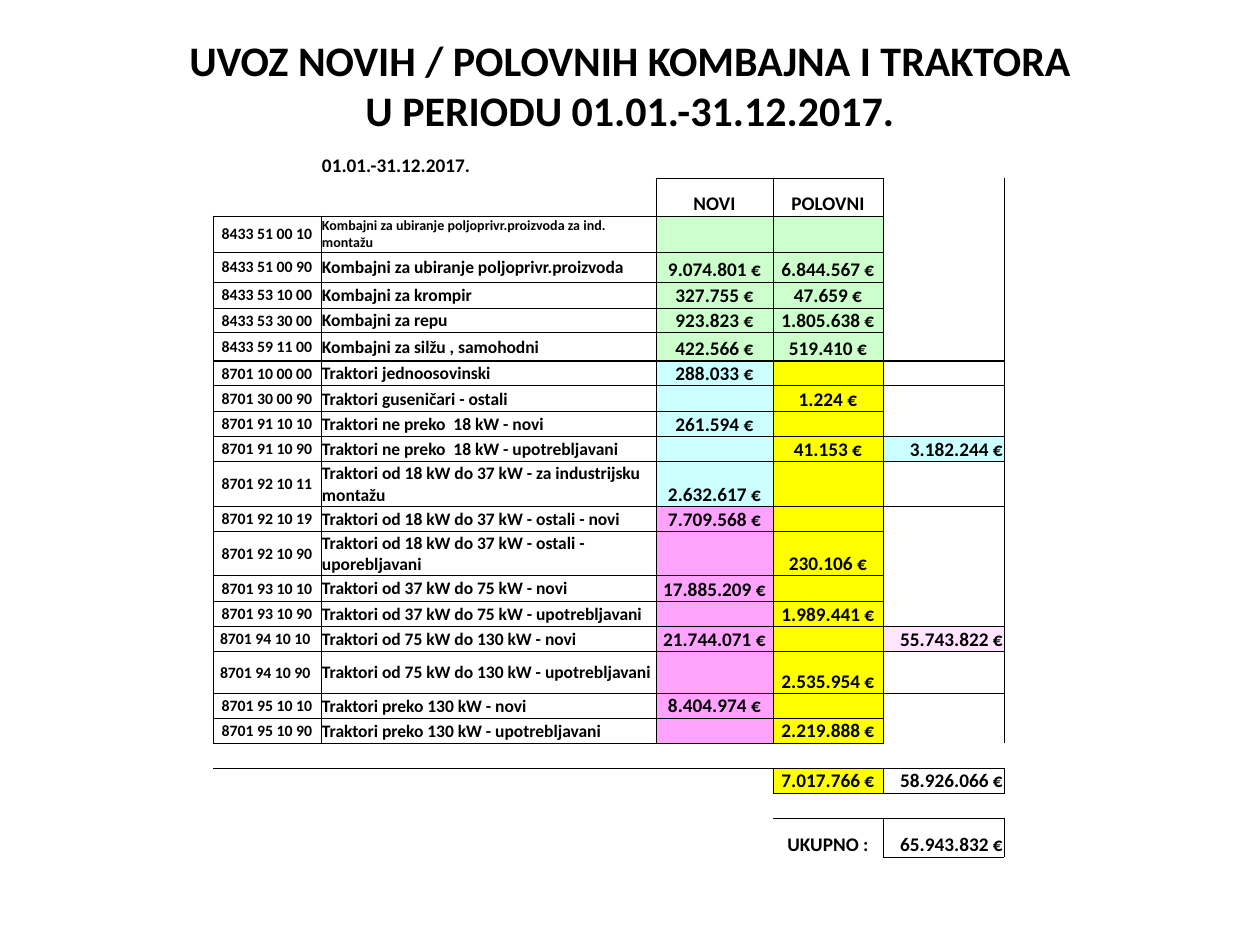
"""Build a slide with a table of combine and tractor imports, new and used."""
from lxml import etree
from pptx import Presentation
from pptx import util as u
from pptx.dml.color import RGBColor
from pptx.enum import text
from pptx.oxml.ns import qn

BLACK = RGBColor(0, 0, 0)
WHITE = RGBColor(255, 255, 255)
GREEN = RGBColor(0xCC, 0xFF, 0xCC)
CYAN = RGBColor(0xCC, 0xFF, 0xFF)
PINK = RGBColor(0xFF, 0xA3, 0xFF)
PALE = RGBColor(0xFF, 0xE5, 0xFF)
YELLOW = RGBColor(0xFF, 0xFF, 0)

TITLE = "UVOZ NOVIH / POLOVNIH KOMBAJNA I TRAKTORA\vU PERIODU 01.01.-31.12.2017."
FONT = "Calibri"
NO_STYLE = "{2D5ABB26-0587-4C30-8999-92F81FD0307C}"

GROUPS = [
    (GREEN, GREEN, [
        ("8433 51 00 10", "Kombajni za ubiranje poljoprivr.proizvoda za ind. montažu", "", ""),
        ("8433 51 00 90", "Kombajni za ubiranje poljoprivr.proizvoda", "9.074.801 €", "6.844.567 €"),
        ("8433 53 10 00", "Kombajni za krompir", "327.755 €", "47.659 €"),
        ("8433 53 30 00", "Kombajni za repu", "923.823 €", "1.805.638 €"),
        ("8433 59 11 00", "Kombajni za silžu , samohodni", "422.566 €", "519.410 €"),
    ]),
    (CYAN, YELLOW, [
        ("8701 10 00 00", "Traktori jednoosovinski", "288.033 €", ""),
        ("8701 30 00 90", "Traktori guseničari - ostali", "", "1.224 €"),
        ("8701 91 10 10", "Traktori ne preko  18 kW - novi", "261.594 €", ""),
        ("8701 91 10 90", "Traktori ne preko  18 kW - upotrebljavani", "", "41.153 €"),
        ("8701 92 10 11", "Traktori od 18 kW do 37 kW - za industrijsku montažu", "2.632.617 €", ""),
    ]),
    (PINK, YELLOW, [
        ("8701 92 10 19", "Traktori od 18 kW do 37 kW - ostali - novi", "7.709.568 €", ""),
        ("8701 92 10 90", "Traktori od 18 kW do 37 kW - ostali - uporebljavani", "", "230.106 €"),
        ("8701 93 10 10", "Traktori od 37 kW do 75 kW - novi", "17.885.209 €", ""),
        ("8701 93 10 90", "Traktori od 37 kW do 75 kW - upotrebljavani", "", "1.989.441 €"),
        ("8701 94 10 10 ", "Traktori od 75 kW do 130 kW - novi", "21.744.071 €", ""),
        ("8701 94 10 90 ", "Traktori od 75 kW do 130 kW - upotrebljavani", "", "2.535.954 €"),
        ("8701 95 10 10", "Traktori preko 130 kW - novi", "8.404.974 €", ""),
        ("8701 95 10 90", "Traktori preko 130 kW - upotrebljavani", "", "2.219.888 €"),
    ]),
]
EXTRAS = [
    (0, 1, "01.01.-31.12.2017.", WHITE, False),
    (1, 2, "NOVI", None, True),
    (1, 3, "POLOVNI", None, True),
    (10, 5, "3.182.244 €", CYAN, True),
    (16, 5, "55.743.822 €", PALE, True),
    (21, 3, "7.017.766 €", YELLOW, True),
    (21, 5, "58.926.066 €", WHITE, True),
    (23, 3, "UKUPNO :", None, False),
    (23, 5, "65.943.832 €", None, True),
]
COLS = [108, 335, 117, 83, 27, 121]
ROWS = [26, 38, 36, 30, 26, 25, 28, 24, 26, 25, 25, 45,
        25, 44, 26, 25, 25, 42, 25, 25, 25, 25, 25, 39]
GAPS = (0, 20, 22)
RULES = [(6, 6), (11, 5)]
SIZES = {0: 9, 1: 10}
ALIGN = {1: text.PP_ALIGN.LEFT, 5: text.PP_ALIGN.RIGHT}
SIDES = {"L": (0, -1, "R"), "R": (0, 1, "L"), "T": (-1, 0, "B"), "B": (1, 0, "T")}


def px(num):
    return u.Emu(round(num * 914400 / 126))


def plan():
    cells = {(row, col): (words, fill, box) for row, col, words, fill, box in EXTRAS}
    row = 2
    for new, used, items in GROUPS:
        for item in items:
            for col, (words, fill) in enumerate(zip(item, (WHITE, WHITE, new, used))):
                cells[row, col] = (words, fill, True)
            row += 1
    return cells


def edges(cells):
    lines = {}

    def draw(row, col, side, width):
        down, over, twin = SIDES[side]
        lines[row, col, side] = width
        lines[row + down, col + over, twin] = width

    for (row, col), (_, _, box) in cells.items():
        if box:
            for part in (3, 4) if col == 3 else (col,):
                for side in SIDES:
                    draw(row, part, side, 0.5)
    for row, count in RULES:
        for col in range(count):
            draw(row, col, "B", 1)
    return lines


def style(cell, row, col, item, lines):
    words, fill, _ = item
    cell.margin_left = cell.margin_right = cell.margin_top = px(1)
    cell.margin_bottom = 0
    middle = col < 2
    cell.vertical_anchor = text.MSO_ANCHOR.MIDDLE if middle else text.MSO_ANCHOR.BOTTOM
    size = 11 if row < 2 else 8 if (row, col) == (2, 1) else SIZES.get(col, 11)
    par = cell.text_frame.paragraphs[0]
    par.alignment = ALIGN.get(col, text.PP_ALIGN.CENTER)
    font = par.font
    font.name, font.size, font.bold = FONT, u.Pt(size), True
    font.color.rgb = BLACK
    if words:
        par.add_run().text = words
    else:
        etree.SubElement(par._p, qn("a:endParaRPr"), sz=str(size * 100))
    props = cell._tc.get_or_add_tcPr()
    for side in SIDES:
        width = lines.get((row, col, side))
        if width:
            line = etree.SubElement(props, qn("a:ln" + side), w=str(u.Pt(width)))
            solid = etree.SubElement(line, qn("a:solidFill"))
            etree.SubElement(solid, qn("a:srgbClr"), val=str(BLACK))
    if fill is None:
        cell.fill.background()
    else:
        cell.fill.solid()
        cell.fill.fore_color.rgb = fill


def head(slide):
    title = slide.shapes.title
    title.left, title.top, title.width, title.height = map(px, (63, 16, 1134, 137))
    frame = title.text_frame
    frame.text = TITLE
    frame.vertical_anchor = text.MSO_ANCHOR.MIDDLE
    par = frame.paragraphs[0]
    par.alignment = text.PP_ALIGN.CENTER
    font = par.font
    font.name, font.size, font.bold = FONT, u.Pt(24), True
    font.color.rgb = BLACK


def grid(slide):
    frame = slide.shapes.add_table(len(ROWS), len(COLS), px(213), px(152),
                                   px(sum(COLS)), px(sum(ROWS)))
    table = frame.table
    table.first_row = table.horz_banding = False
    table._tbl.tblPr.find(qn("a:tableStyleId")).text = NO_STYLE
    for col, width in zip(table.columns, COLS):
        col.width = px(width)
    for row, height in zip(table.rows, ROWS):
        row.height = px(height)
    cells = plan()
    lines = edges(cells)
    for row in range(len(ROWS)):
        if row not in GAPS:
            table.cell(row, 3).merge(table.cell(row, 4))
        for col in range(len(COLS)):
            item = cells.get((row, col), ("", None, False))
            style(table.cell(row, col), row, col, item, lines)


def main():
    deck = Presentation()
    deck.slide_width, deck.slide_height = px(1260), px(945)
    slide = deck.slides.add_slide(deck.slide_layouts[5])
    head(slide)
    grid(slide)
    deck.save("out.pptx")


if __name__ == "__main__":
    main()
